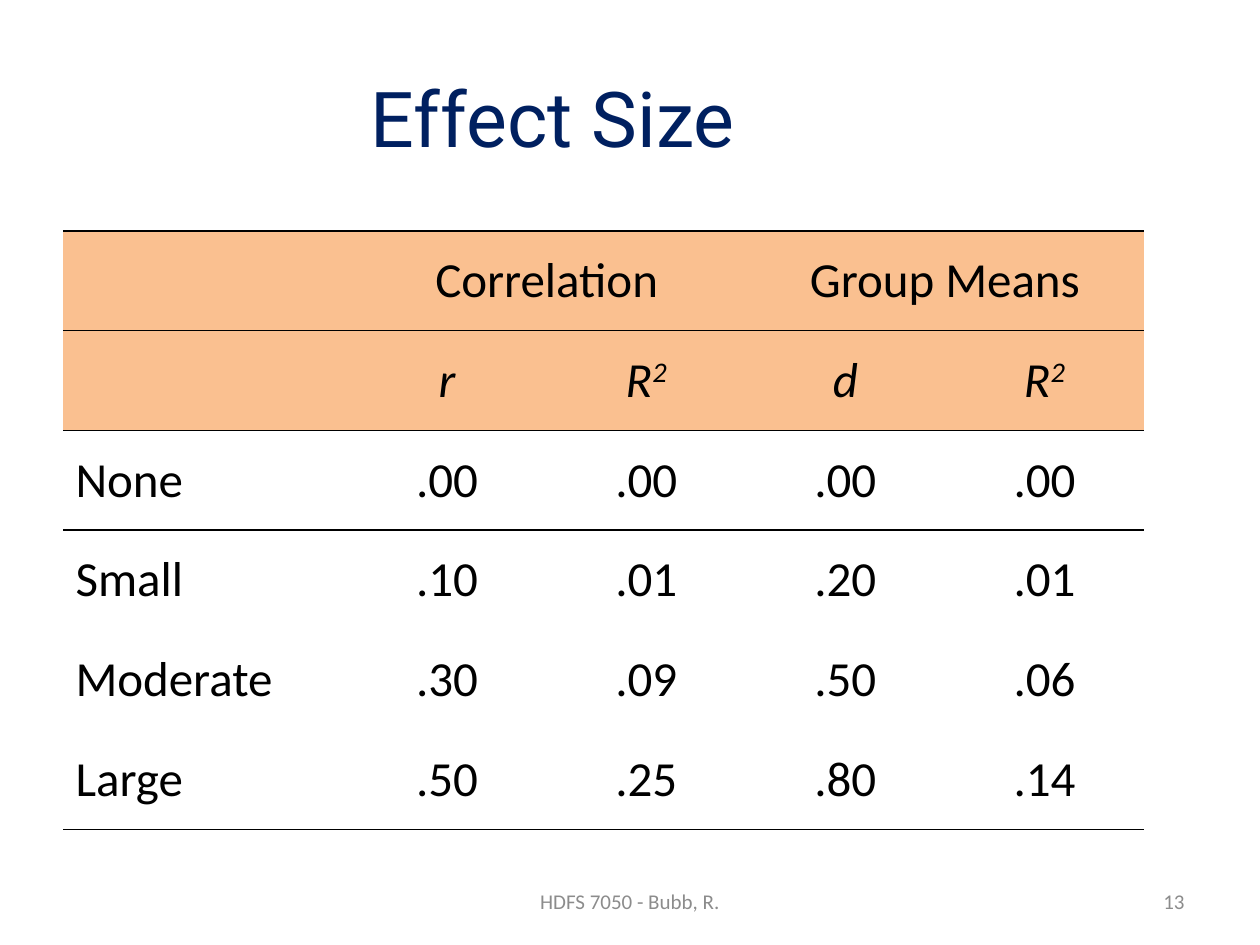
"""Build the effect size slide with its table of conventional benchmarks."""

from dataclasses import dataclass

from lxml import etree
from pptx import Presentation
from pptx.dml.color import RGBColor
from pptx.enum.text import MSO_ANCHOR, PP_ALIGN
from pptx.oxml.ns import qn
from pptx.util import Pt

LEFT, CENTER, RIGHT = PP_ALIGN.LEFT, PP_ALIGN.CENTER, PP_ALIGN.RIGHT
MIDDLE = MSO_ANCHOR.MIDDLE


@dataclass(frozen=True)
class Theme:
    title_font: str = "Roboto"
    body_font: str = "Calibri"
    navy: str = "002060"
    black: str = "000000"
    grey: str = "8C8C8C"
    orange: str = "FAC090"
    title_size: int = 44
    table_size: int = 28
    footer_size: int = 12


@dataclass(frozen=True)
class FooterItem:
    text: str
    left: float
    width: float
    align: PP_ALIGN


@dataclass(frozen=True)
class TableRow:
    texts: tuple[str, ...]
    header: bool = False
    italic: bool = False


THEME = Theme()
ROWS = (
    TableRow(("", "Correlation", "", "Group Means", ""), header=True),
    TableRow(("", "r", "R^2", "d", "R^2"), header=True, italic=True),
    TableRow(("None", ".00", ".00", ".00", ".00")),
    TableRow(("Small", ".10", ".01", ".20", ".01")),
    TableRow(("Moderate", ".30", ".09", ".50", ".06")),
    TableRow(("Large", ".50", ".25", ".80", ".14")),
)
RULED_EDGES = {0, 1, 2, 3, 6}
MERGED_STARTS = (1, 3)
LABEL_WIDTH, VALUE_WIDTH, ROW_HEIGHT = 162.6, 113.8, 57
FOOTER = (
    FooterItem("HDFS 7050 - Bubb, R.", 246, 228, CENTER),
    FooterItem("13", 516, 168, RIGHT),
)


def style_paragraph(p, align: PP_ALIGN, font: str, size: int, color: str) -> None:
    """Apply alignment, font, size and colour to a paragraph."""
    p.alignment = align
    p.font.name = font
    p.font.size = Pt(size)
    p.font.color.rgb = RGBColor.from_string(color)


def add_border(cell, side: str, ruled: bool) -> None:
    """Add a black rule, or an invisible one, to one side of a cell."""
    ln = etree.SubElement(cell._tc.get_or_add_tcPr(), qn(f"a:{side}"), w=str(Pt(1)))
    if ruled:
        fill = etree.SubElement(ln, qn("a:solidFill"))
        etree.SubElement(fill, qn("a:srgbClr"), val=THEME.black)
    else:
        etree.SubElement(ln, qn("a:noFill"))


def fill_cell(cell, row: TableRow, row_index: int, col_index: int) -> None:
    """Write and format one table cell, raising any text after a caret."""
    edges = {
        "lnL": False,
        "lnR": False,
        "lnT": row_index in RULED_EDGES,
        "lnB": row_index + 1 in RULED_EDGES,
    }
    for side, ruled in edges.items():
        add_border(cell, side, ruled)
    if row.header:
        cell.fill.solid()
        cell.fill.fore_color.rgb = RGBColor.from_string(THEME.orange)
    else:
        cell.fill.background()
    cell.vertical_anchor = MIDDLE
    p = cell.text_frame.paragraphs[0]
    style_paragraph(p, CENTER if col_index else LEFT, THEME.body_font,
                    THEME.table_size, THEME.black)
    p.font.italic = row.italic
    base, _, power = row.texts[col_index].partition("^")
    if base:
        p.add_run().text = base
    if power:
        r = p.add_run()
        r.text = power
        r.font._element.set("baseline", "30000")


def add_effect_table(s) -> None:
    """Add the effect size table."""
    cols = len(ROWS[0].texts)
    widths = [LABEL_WIDTH] + [VALUE_WIDTH] * (cols - 1)
    table = s.shapes.add_table(len(ROWS), cols, Pt(36), Pt(132), Pt(sum(widths)),
                               Pt(ROW_HEIGHT * len(ROWS))).table
    table.first_row = False
    table.horz_banding = False
    for column, width in zip(table.columns, widths):
        column.width = Pt(width)
    for i, row in enumerate(ROWS):
        table.rows[i].height = Pt(ROW_HEIGHT)
        for j in range(cols):
            fill_cell(table.cell(i, j), row, i, j)
    for start in MERGED_STARTS:
        table.cell(0, start).merge(table.cell(0, start + 1))


def add_title(s, text: str) -> None:
    """Place and format the slide title."""
    sp = s.shapes.title
    sp.left, sp.top, sp.width, sp.height = Pt(36), Pt(21.6), Pt(560), Pt(90)
    tf = sp.text_frame
    tf.text = text
    tf.vertical_anchor = MIDDLE
    style_paragraph(tf.paragraphs[0], CENTER, THEME.title_font,
                    THEME.title_size, THEME.navy)


def add_footer_item(s, item: FooterItem) -> None:
    """Add one line of footer text."""
    tf = s.shapes.add_textbox(Pt(item.left), Pt(500.5), Pt(item.width), Pt(28.8)).text_frame
    tf.word_wrap = True
    tf.vertical_anchor = MIDDLE
    tf.text = item.text
    style_paragraph(tf.paragraphs[0], item.align, THEME.body_font,
                    THEME.footer_size, THEME.grey)


def main() -> None:
    """Build and save the presentation."""
    prs = Presentation()
    prs.slide_width, prs.slide_height = Pt(720), Pt(540)
    s = prs.slides.add_slide(prs.slide_layouts[5])
    add_title(s, "Effect Size")
    for item in FOOTER:
        add_footer_item(s, item)
    add_effect_table(s)
    prs.save("out.pptx")


if __name__ == "__main__":
    main()
